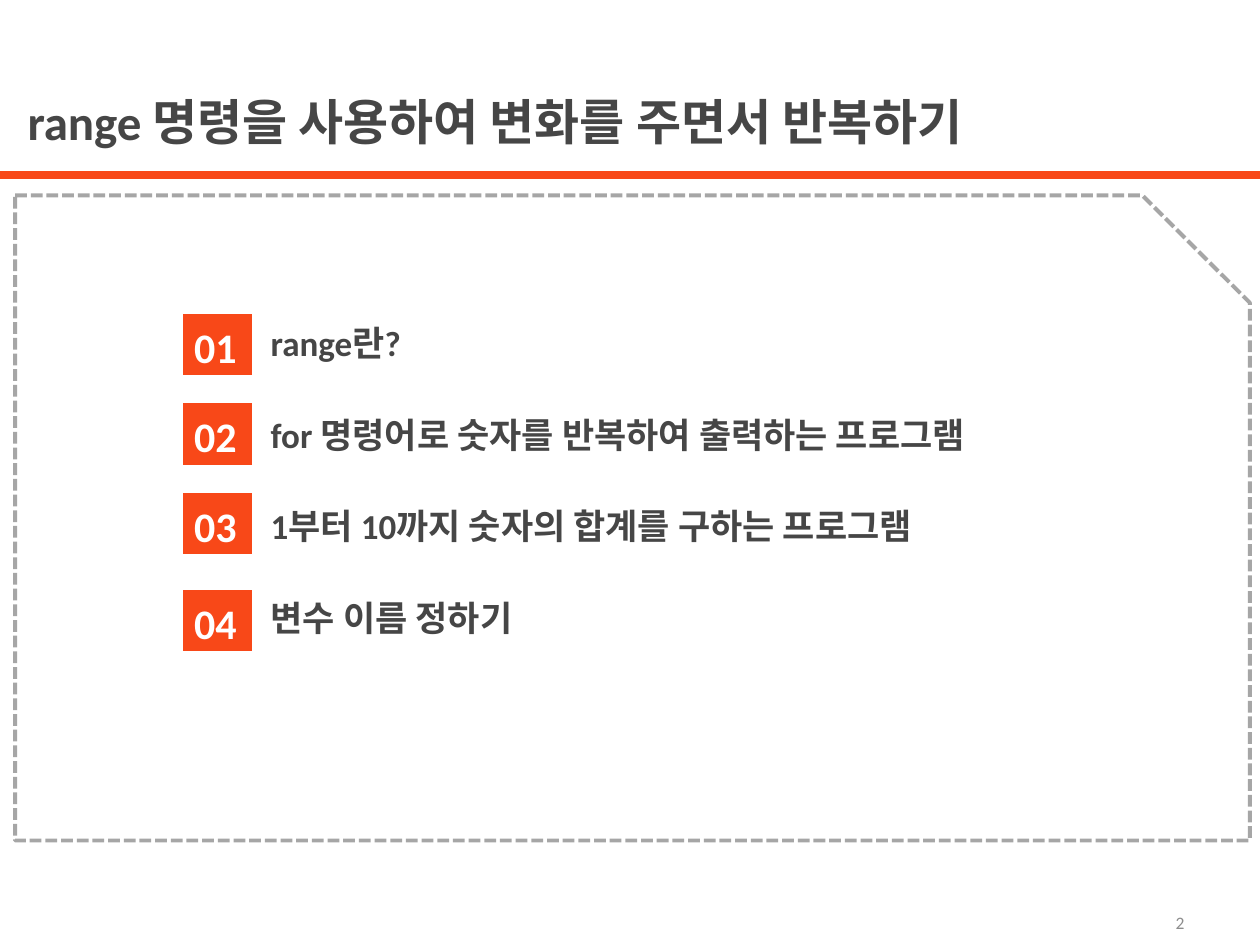
"""Build the contents slide of a lesson on repeating with range."""
from dataclasses import dataclass

from lxml.etree import SubElement
from pptx import Presentation
from pptx.dml.color import RGBColor
from pptx.enum.dml import MSO_LINE
from pptx.enum.shapes import MSO_CONNECTOR, MSO_SHAPE
from pptx.enum.text import MSO_ANCHOR, MSO_AUTO_SIZE, PP_ALIGN
from pptx.oxml.ns import qn
from pptx.util import Inches, Pt

TITLE = "range 명령을 사용하여 변화를 주면서 반복하기"
TOPICS = [
    "range란?",
    "for 명령어로 숫자를 반복하여 출력하는 프로그램",
    "1부터 10까지 숫자의 합계를 구하는 프로그램",
    "변수 이름 정하기",
]
PAGE_NUMBER = "2"

TITLE_AREA = (1.2, 9.07, 94.5, 7.6)
FRAME_AREA = (1.2, 20.67, 98, 68.27)
TOPICS_AREA = (20.5, 32.93, 69.7, 35.87)
NUMBER_AREA = (71.7, 95.47, 23.3, 4.27)
RULE_TOP = 18.53
BADGE_TOPS = [33.2, 42.67, 52.13, 62.4]
BADGE_LEFT, BADGE_WIDTH, BADGE_HEIGHT = 14.5, 5.5, 6.53
LABEL_LEFT, LABEL_WIDTH, LABEL_HEIGHT, LABEL_DROP = 13.4, 7.4, 6.67, 0.13


@dataclass(frozen=True)
class Theme:
    """Hold the colours, font and sizes of the slide."""
    font: str = "Calibri"
    accent: RGBColor = RGBColor(0xF8, 0x48, 0x18)
    ink: RGBColor = RGBColor(0x46, 0x46, 0x46)
    frame: RGBColor = RGBColor(0xA6, 0xA6, 0xA6)
    muted: RGBColor = RGBColor(0x8D, 0x8D, 0x8D)
    white: RGBColor = RGBColor(0xFF, 0xFF, 0xFF)
    title_size: int = 28
    badge_size: int = 24
    topic_size: int = 20
    number_size: int = 10
    topic_gap: int = 26
    topic_spacing: float = 1.1
    rule_width: float = 4.5
    frame_width: float = 2.25


THEME = Theme()
deck = Presentation()
deck.slide_width, deck.slide_height = Inches(10), Inches(7.5)
page = deck.slides.add_slide(deck.slide_layouts[6])


def place(left, top, width, height):
    """Turn percentages of the slide into lengths."""
    return (
        int(deck.slide_width * left / 100),
        int(deck.slide_height * top / 100),
        int(deck.slide_width * width / 100),
        int(deck.slide_height * height / 100),
    )


def add_text(shapes, area, lines, size, color, bold=True, align=PP_ALIGN.LEFT):
    """Add a wrapped text box with one paragraph per line."""
    box = shapes.add_textbox(*place(*area))
    frame = box.text_frame
    frame.word_wrap = True
    frame.auto_size = MSO_AUTO_SIZE.SHAPE_TO_FIT_TEXT
    for index, line in enumerate(lines):
        para = frame.add_paragraph() if index else frame.paragraphs[0]
        para.alignment = align
        span = para.add_run()
        span.text = line
        span.font.name = THEME.font
        span.font.size = Pt(size)
        span.font.bold = bold
        span.font.color.rgb = color
    return frame


def add_rule():
    """Add the full-width rule below the title."""
    left, top, width, _ = place(0, RULE_TOP, 100, 0)
    rule = page.shapes.add_connector(MSO_CONNECTOR.STRAIGHT, left, top, left + width, top)
    rule.line.color.rgb = THEME.accent
    rule.line.width = Pt(THEME.rule_width)
    SubElement(rule._element.spPr, qn("a:effectLst"))


def add_frame():
    """Add the dashed frame with a snipped corner."""
    frame = page.shapes.add_shape(MSO_SHAPE.SNIP_1_RECTANGLE, *place(*FRAME_AREA))
    frame.shadow.inherit = False
    frame.fill.background()
    frame.line.color.rgb = THEME.frame
    frame.line.width = Pt(THEME.frame_width)
    frame.line.dash_style = MSO_LINE.SQUARE_DOT


def add_badge(number, top):
    """Add a numbered square grouped with its label."""
    group = page.shapes.add_group_shape()
    square = group.shapes.add_shape(
        MSO_SHAPE.FLOWCHART_PROCESS, *place(BADGE_LEFT, top, BADGE_WIDTH, BADGE_HEIGHT))
    square.shadow.inherit = False
    square.fill.solid()
    square.fill.fore_color.rgb = THEME.accent
    square.line.fill.background()
    label_area = (LABEL_LEFT, top + LABEL_DROP, LABEL_WIDTH, LABEL_HEIGHT)
    add_text(group.shapes, label_area, [f"{number:02d}"], THEME.badge_size,
             THEME.white, align=PP_ALIGN.CENTER)


def add_topics():
    """Add the list of topics at an even pitch."""
    frame = add_text(page.shapes, TOPICS_AREA, TOPICS, THEME.topic_size, THEME.ink)
    for index, para in enumerate(frame.paragraphs):
        para.line_spacing = THEME.topic_spacing
        if index:
            para.space_before = Pt(THEME.topic_gap)


def main():
    """Assemble and save the slide."""
    number = add_text(page.shapes, NUMBER_AREA, [PAGE_NUMBER], THEME.number_size,
                      THEME.muted, bold=False, align=PP_ALIGN.RIGHT)
    number.auto_size = MSO_AUTO_SIZE.NONE
    number.vertical_anchor = MSO_ANCHOR.MIDDLE
    add_text(page.shapes, TITLE_AREA, [TITLE], THEME.title_size, THEME.ink)
    add_rule()
    add_frame()
    add_topics()
    for index, top in enumerate(BADGE_TOPS, start=1):
        add_badge(index, top)
    deck.save("out.pptx")


if __name__ == "__main__":
    main()
